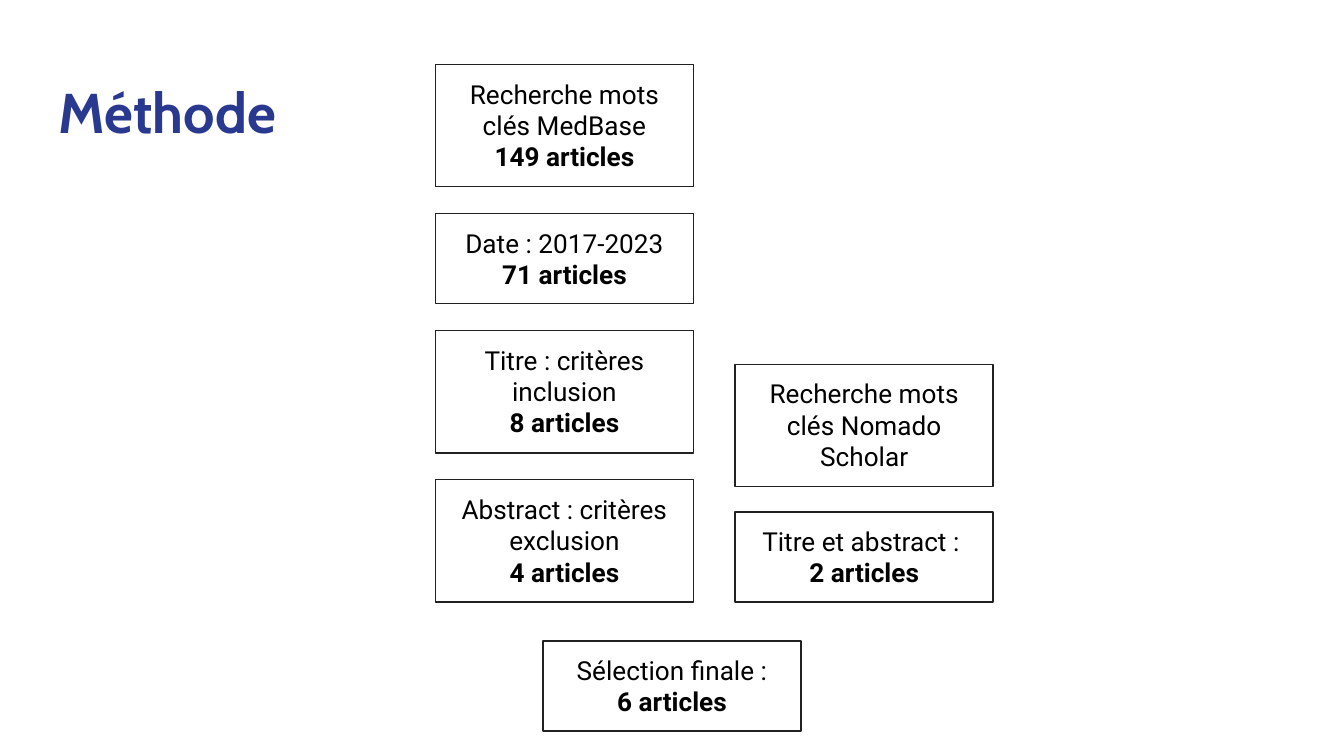
"""Build the "Méthode" slide: article selection steps in two columns and a final result."""
from dataclasses import dataclass

from pptx import Presentation
from pptx.dml.color import RGBColor
from pptx.enum.shapes import MSO_SHAPE
from pptx.enum.text import MSO_ANCHOR, MSO_AUTO_SIZE, PP_ALIGN
from pptx.util import Inches, Pt


@dataclass(frozen=True)
class Theme:
    title_color: RGBColor = RGBColor.from_string("2A3990")
    text_color: RGBColor = RGBColor.from_string("000000")
    line_color: RGBColor = RGBColor.from_string("212121")
    title_font: str = "Cabin"
    text_font: str = "Roboto"
    title_size: Pt = Pt(30)
    text_size: Pt = Pt(14)
    line_width: Pt = Pt(0.75)


THEME = Theme()
BOX_WIDTH = 1.92
BOX_HEIGHTS = {2: 0.67, 3: 0.91}
FRAME_FORMAT = {
    "word_wrap": True,
    "vertical_anchor": MSO_ANCHOR.TOP,
    **{f"margin_{side}": Inches(0.1) for side in ("left", "top", "right", "bottom")},
}
TITLE_FORMAT = {"name": THEME.title_font, "size": THEME.title_size, "bold": True}
TEXT_FORMAT = {"name": THEME.text_font, "size": THEME.text_size}

COLUMNS = [
    (3.24, 0.48, 0.2, [
        (3, "Recherche mots clés MedBase", "149 articles"),
        (2, "Date : 2017-2023", "71 articles"),
        (3, "Titre : critères inclusion", "8 articles"),
        (3, "Abstract : critères exclusion", "4 articles"),
    ]),
    (5.47, 2.71, 0.19, [
        (3, "Recherche mots clés Nomado Scholar", None),
        (2, "Titre et abstract : ", "2 articles"),
    ]),
    (4.04, 4.77, 0, [(2, "Sélection finale :", "6 articles")]),
]


def set_attributes(target, values):
    for name, value in values.items():
        setattr(target, name, value)


def write_paragraph(paragraph, text, font_format, color, alignment):
    paragraph.alignment = alignment
    run = paragraph.add_run()
    run.text = text
    set_attributes(run.font, font_format)
    run.font.color.rgb = color


presentation = Presentation()
presentation.slide_width = Inches(10)
presentation.slide_height = Inches(10) * 9 // 16
slide = presentation.slides.add_slide(presentation.slide_layouts[6])

title = slide.shapes.add_textbox(Inches(0.34), Inches(0.48), Inches(9.32), Inches(0.66))
set_attributes(title.text_frame, FRAME_FORMAT)
write_paragraph(title.text_frame.paragraphs[0], "Méthode", TITLE_FORMAT,
                THEME.title_color, PP_ALIGN.LEFT)

for left, top, gap, steps in COLUMNS:
    for line_count, label, count in steps:
        height = BOX_HEIGHTS[line_count]
        box = slide.shapes.add_shape(MSO_SHAPE.RECTANGLE, Inches(left), Inches(top),
                                     Inches(BOX_WIDTH), Inches(height))
        box.shadow.inherit = False
        box.fill.background()
        box.line.color.rgb = THEME.line_color
        box.line.width = THEME.line_width
        frame = box.text_frame
        set_attributes(frame, FRAME_FORMAT)
        frame.auto_size = MSO_AUTO_SIZE.SHAPE_TO_FIT_TEXT
        write_paragraph(frame.paragraphs[0], label, TEXT_FORMAT,
                        THEME.text_color, PP_ALIGN.CENTER)
        if count:
            write_paragraph(frame.add_paragraph(), count, {**TEXT_FORMAT, "bold": True},
                            THEME.text_color, PP_ALIGN.CENTER)
        top += height + gap

presentation.save("out.pptx")
